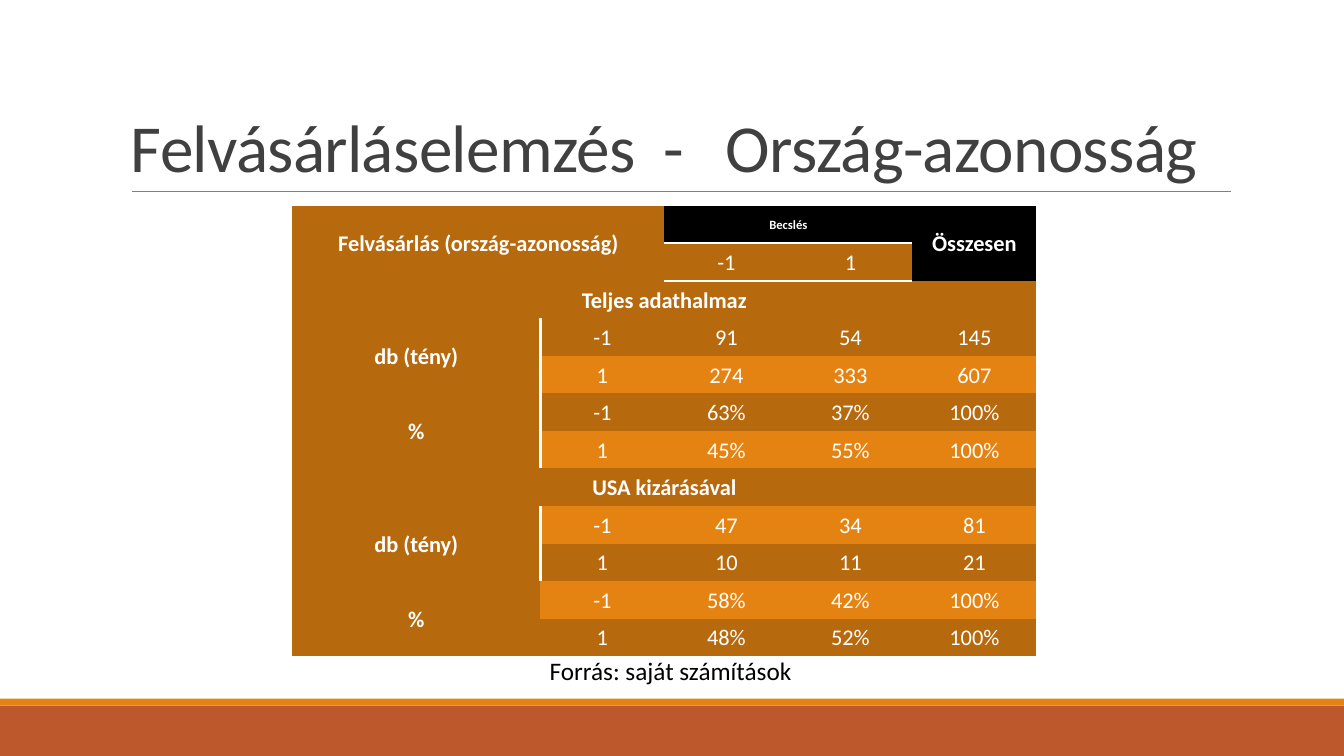
from lxml.etree import SubElement
from pptx import Presentation
from pptx.dml.color import RGBColor
from pptx.enum.shapes import MSO_CONNECTOR as Connector, MSO_SHAPE as Preset
from pptx.enum.text import MSO_ANCHOR as Anchor, PP_ALIGN as Align
from pptx.oxml.ns import qn
from pptx.util import Inches, Pt

WHITE, BLACK, GREY, DARK = "FFFFFF", "000000", "808080", "404040"
BRICK, ORANGE, BROWN = "BD582C", "E48312", "B7690E"
NO_STYLE = "{2D5ABB26-0587-4C30-8999-92F81FD0307C}"

COLUMN_UNITS = [2, 1, 1, 1, 1]
# Section title, then (label, colour of its two rows, values of its two rows)
SECTIONS = [
    ("Teljes adathalmaz", (BROWN, ORANGE), [
        ("db (tény)", [("91", "54", "145"), ("274", "333", "607")]),
        ("%", [("63%", "37%", "100%"), ("45%", "55%", "100%")]),
    ]),
    ("USA kizárásával", (ORANGE, BROWN), [
        ("db (tény)", [("47", "34", "81"), ("10", "11", "21")]),
        ("%", [("58%", "42%", "100%"), ("48%", "52%", "100%")]),
    ]),
]


def color(value):
    return RGBColor.from_string(value)


def write(frame, text, size=16, ink=WHITE, bold=False, align=Align.CENTER,
          leading=None, tracking=None, tabs=()):
    """Fill a text frame with one formatted paragraph; tabs are in inches."""
    para = frame.paragraphs[0]
    para.alignment = align
    if leading:
        para.line_spacing = leading
    if tabs:
        tab_list = SubElement(para._p.get_or_add_pPr(), qn("a:tabLst"))
        for stop in tabs:
            SubElement(tab_list, qn("a:tab"), pos=str(Inches(stop)), algn="l")
    span = para.add_run()
    span.text = text
    span.font.name = "Calibri"
    span.font.size = Pt(size)
    span.font.bold = bold
    span.font.color.rgb = color(ink)
    if tracking:
        span.font._element.set("spc", str(round(tracking * 100)))


def rule_cell(cell, side):
    """Draw a white border on one side of a cell: lnR or lnB."""
    properties = cell._tc.get_or_add_tcPr()
    line = properties.makeelement(qn("a:" + side), {"w": str(Pt(2))})
    fill = SubElement(line, qn("a:solidFill"))
    SubElement(fill, qn("a:srgbClr"), val=WHITE)
    properties.insert(0, line)


class SlideBuilder:
    """Places elements on one slide; lengths are percentages of its size."""

    def __init__(self):
        self.deck = Presentation()
        self.deck.slide_width, self.deck.slide_height = Inches(13.33), Inches(7.5)
        self.page = self.deck.slides.add_slide(self.deck.slide_layouts[6])

    def x(self, share):
        return round(self.deck.slide_width * share / 100)

    def y(self, share):
        return round(self.deck.slide_height * share / 100)

    def area(self, left, top, width, height):
        return self.x(left), self.y(top), self.x(width), self.y(height)

    def bar(self, top, height, fill):
        shape = self.page.shapes.add_shape(Preset.RECTANGLE, *self.area(0, top, 100, height))
        shape.shadow.inherit = False
        shape.fill.solid()
        shape.fill.fore_color.rgb = color(fill)
        shape.line.fill.background()

    def rule(self, left, right, top):
        line = self.page.shapes.add_connector(
            Connector.STRAIGHT, self.x(left), self.y(top), self.x(right), self.y(top))
        line.line.color.rgb = color(GREY)
        line.line.width = Pt(0.5)
        SubElement(line._element.spPr, qn("a:effectLst"))

    def text(self, place, text, anchor=Anchor.TOP, **style):
        box = self.page.shapes.add_textbox(*self.area(*place))
        box.text_frame.word_wrap = True
        box.text_frame.vertical_anchor = anchor
        write(box.text_frame, text, **style)

    def table(self, place, row_count, column_units):
        left, top, width, height = self.area(*place)
        table = self.page.shapes.add_table(
            row_count, len(column_units), left, top, width, height).table
        table._tbl.tblPr.find(qn("a:tableStyleId")).text = NO_STYLE
        table.first_row = table.horz_banding = False
        for column, units in zip(table.columns, column_units):
            column.width = round(width * units / sum(column_units))
        for row in table.rows:
            row.height = round(height / row_count)
        return table

    def cell(self, table, row, column, text, fill=BROWN, span=(1, 1), border=(), **style):
        """Fill a cell or merged block; border names the ruled outer sides."""
        last_row, last_column = row + span[0] - 1, column + span[1] - 1
        origin = table.cell(row, column)
        if span != (1, 1):
            origin.merge(table.cell(last_row, last_column))
        for r in range(row, last_row + 1):
            for c in range(column, last_column + 1):
                part = table.cell(r, c)
                part.fill.solid()
                part.fill.fore_color.rgb = color(fill)
                if "lnB" in border and r == last_row:
                    rule_cell(part, "lnB")
                if "lnR" in border and c == last_column:
                    rule_cell(part, "lnR")
        origin.vertical_anchor = Anchor.MIDDLE
        origin.margin_left = origin.margin_right = Inches(0.05)
        origin.margin_top = origin.margin_bottom = 0
        write(origin.text_frame, text, leading=1.07, **style)


def add_acquisition_table(slide):
    table = slide.table((21.75, 27.2, 55.37, 59.6), 12, COLUMN_UNITS)
    slide.cell(table, 0, 0, "Felvásárlás (ország-azonosság)", span=(2, 2),
               border=("lnB",), bold=True)
    slide.cell(table, 0, 2, "Becslés", BLACK, (1, 2), ("lnB",), size=9, bold=True)
    slide.cell(table, 0, 4, "Összesen", BLACK, (2, 1), ("lnB",), bold=True)
    for column, outcome in enumerate(("-1", "1"), 2):
        slide.cell(table, 1, column, outcome, border=("lnB",))

    row = 2
    for title, fills, groups in SECTIONS:
        slide.cell(table, row, 0, title, span=(1, 5), border=("lnR",), bold=True)
        row += 1
        for label, lines in groups:
            is_last_group = row + len(lines) == len(table.rows)
            slide.cell(table, row, 0, label, span=(2, 1),
                       border=() if is_last_group else ("lnR",), bold=True)
            for outcome, fill, values in zip(("-1", "1"), fills, lines):
                for column, value in enumerate((outcome, *values), 1):
                    slide.cell(table, row, column, value, fill)
                row += 1


def main():
    slide = SlideBuilder()
    slide.bar(93.33, 6.67, BRICK)
    slide.bar(92.4, 0.93, ORANGE)
    slide.rule(9.83, 91.6, 25.33)
    slide.text((9, 4.13, 82.5, 21.2), "Felvásárláselemzés\t-\tOrszág-azonosság",
               Anchor.BOTTOM, size=48, ink=DARK, align=Align.LEFT,
               leading=0.85, tracking=-0.5, tabs=(5.28, 5.9))
    add_acquisition_table(slide)
    slide.text((2.18, 86, 95.42, 5.33), "Forrás: saját számítások", size=18, ink=BLACK)
    slide.deck.save("out.pptx")


if __name__ == "__main__":
    main()
